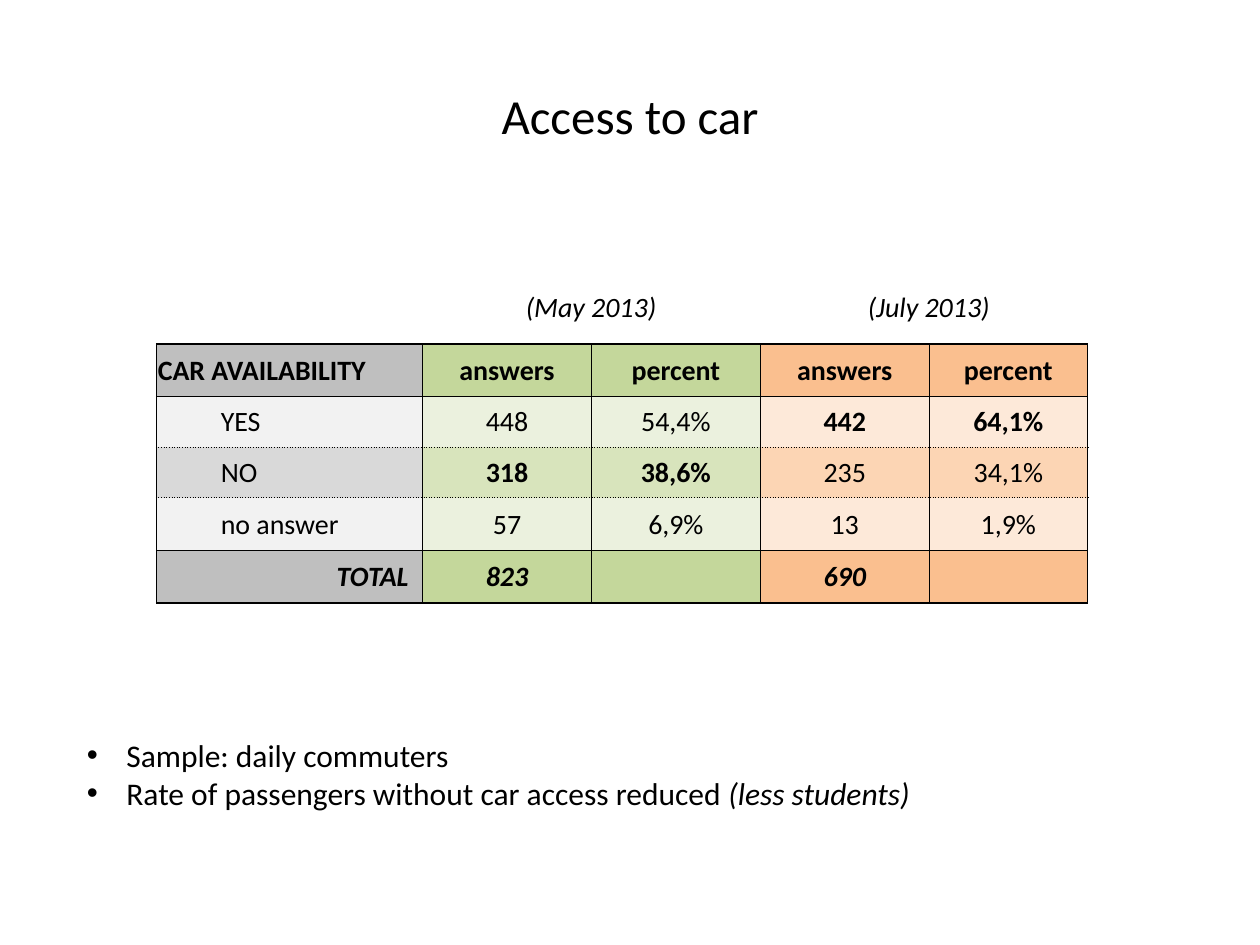
from lxml.etree import SubElement
from pptx import Presentation
from pptx.dml.color import RGBColor
from pptx.enum.text import MSO_ANCHOR as Anchor, MSO_AUTO_SIZE as AutoSize, PP_ALIGN as Align
from pptx.oxml.ns import qn
from pptx.util import Pt


def style(font, size, bold=False, italic=False, color="000000"):
    font.name = "Calibri"
    font.size = Pt(size)
    font.bold = bold
    font.italic = italic
    font.color.rgb = RGBColor.from_string(color)


def add_border(cell, side, width, dash):
    """Draw a black line on one side (L, R, T or B) of a table cell."""
    line = SubElement(cell._tc.get_or_add_tcPr(), qn(f"a:ln{side}"), w=str(Pt(width)))
    fill = SubElement(line, qn("a:solidFill"))
    SubElement(fill, qn("a:srgbClr"), val="000000")
    SubElement(line, qn("a:prstDash"), val=dash)


presentation = Presentation()
presentation.slide_width, presentation.slide_height = Pt(720), Pt(540)
slide = presentation.slides.add_slide(presentation.slide_layouts[1])

# Title
title = slide.shapes.title
title.left, title.top, title.width, title.height = Pt(0), Pt(45.5), Pt(720), Pt(77)
title.text_frame.text = "Access to car"
title.text_frame.vertical_anchor = Anchor.TOP
style(title.text_frame.paragraphs[0].runs[0].font, 28)

# Bullet list
body = slide.placeholders[1]
body.left, body.top, body.width, body.height = Pt(42.5), Pt(417), Pt(663), Pt(51)
body.text_frame.text = "Sample: daily commuters\nRate of passengers without car access reduced "
remark = body.text_frame.paragraphs[1].add_run()
remark.text = "(less students)"
for paragraph in body.text_frame.paragraphs:
    properties = paragraph._p.get_or_add_pPr()
    properties.set("marL", str(Pt(22.5)))
    properties.set("indent", str(Pt(-22.5)))
    paragraph.space_before = Pt(0)
    for run in paragraph.runs:
        style(run.font, 18, italic=run.text == remark.text)

# Table
rows = [
    ["CAR AVAILABILITY", "answers", "percent", "answers", "percent"],
    ["YES", "448", "54,4%", "442", "64,1%"],
    ["NO", "318", "38,6%", "235", "34,1%"],
    ["no answer", "57", "6,9%", "13", "1,9%"],
    ["TOTAL", "823", "", "690", ""],
]
column_widths = [152, 96.5, 96.5, 96.5, 90.5]
row_heights = [30, 29, 29, 30, 30]
strong, light, medium = (
    ["BFBFBF", "C4D79B", "FABF8F"],
    ["F2F2F2", "EBF1DE", "FDE9D9"],
    ["D9D9D9", "D8E4BC", "FCD5B4"],
)
row_fills = [strong, light, medium, light, strong]
highlights = {(1, 3), (1, 4), (2, 1), (2, 2)}
vertical_lines = [(width, "solid") for width in (1, 1, 0.5, 1, 0.5, 1)]
solid, dotted = (1, "solid"), (0.5, "sysDot")
horizontal_lines = [solid, solid, dotted, dotted, solid, solid]

table = slide.shapes.add_table(
    len(rows), len(column_widths), Pt(89.5), Pt(196.5),
    Pt(sum(column_widths)), Pt(sum(row_heights)),
).table
table.first_row = table.horz_banding = False
for column, width in zip(table.columns, column_widths):
    column.width = Pt(width)
for row, height in zip(table.rows, row_heights):
    row.height = Pt(height)

last_row = len(rows) - 1
for r, values in enumerate(rows):
    for c, value in enumerate(values):
        cell = table.cell(r, c)
        cell.margin_left = cell.margin_right = cell.margin_top = Pt(0.7)
        cell.margin_bottom = Pt(0)
        cell.vertical_anchor = Anchor.MIDDLE
        add_border(cell, "L", *vertical_lines[c])
        add_border(cell, "R", *vertical_lines[c + 1])
        add_border(cell, "T", *horizontal_lines[r])
        add_border(cell, "B", *horizontal_lines[r + 1])
        cell.fill.solid()
        cell.fill.fore_color.rgb = RGBColor.from_string(row_fills[r][(c + 1) // 2])

        cell.text_frame.text = value
        paragraph = cell.text_frame.paragraphs[0]
        if c > 0:
            paragraph.alignment = Align.CENTER
        elif r > 0:
            paragraph.level = 1
            paragraph._p.get_or_add_pPr().set("marL", str(Pt(36)))
            if r == last_row:
                paragraph.alignment = Align.RIGHT
                cell.margin_right = Pt(8)
        bold = r in (0, last_row) or (r, c) in highlights
        for run in paragraph.runs:
            style(run.font, 16, bold, italic=r == last_row)

# Survey dates above the table
for text, left, width, wrap in [("(May 2013)", 287, 101.5, True), ("(July 2013)", 486.5, 88.5, False)]:
    label = slide.shapes.add_textbox(Pt(left), Pt(162), Pt(width), Pt(26.5))
    label.text_frame.word_wrap = wrap
    label.text_frame.auto_size = AutoSize.SHAPE_TO_FIT_TEXT
    label.text_frame.text = text
    paragraph = label.text_frame.paragraphs[0]
    paragraph.alignment = Align.CENTER
    style(paragraph.runs[0].font, 16, italic=True)

presentation.save("out.pptx")
